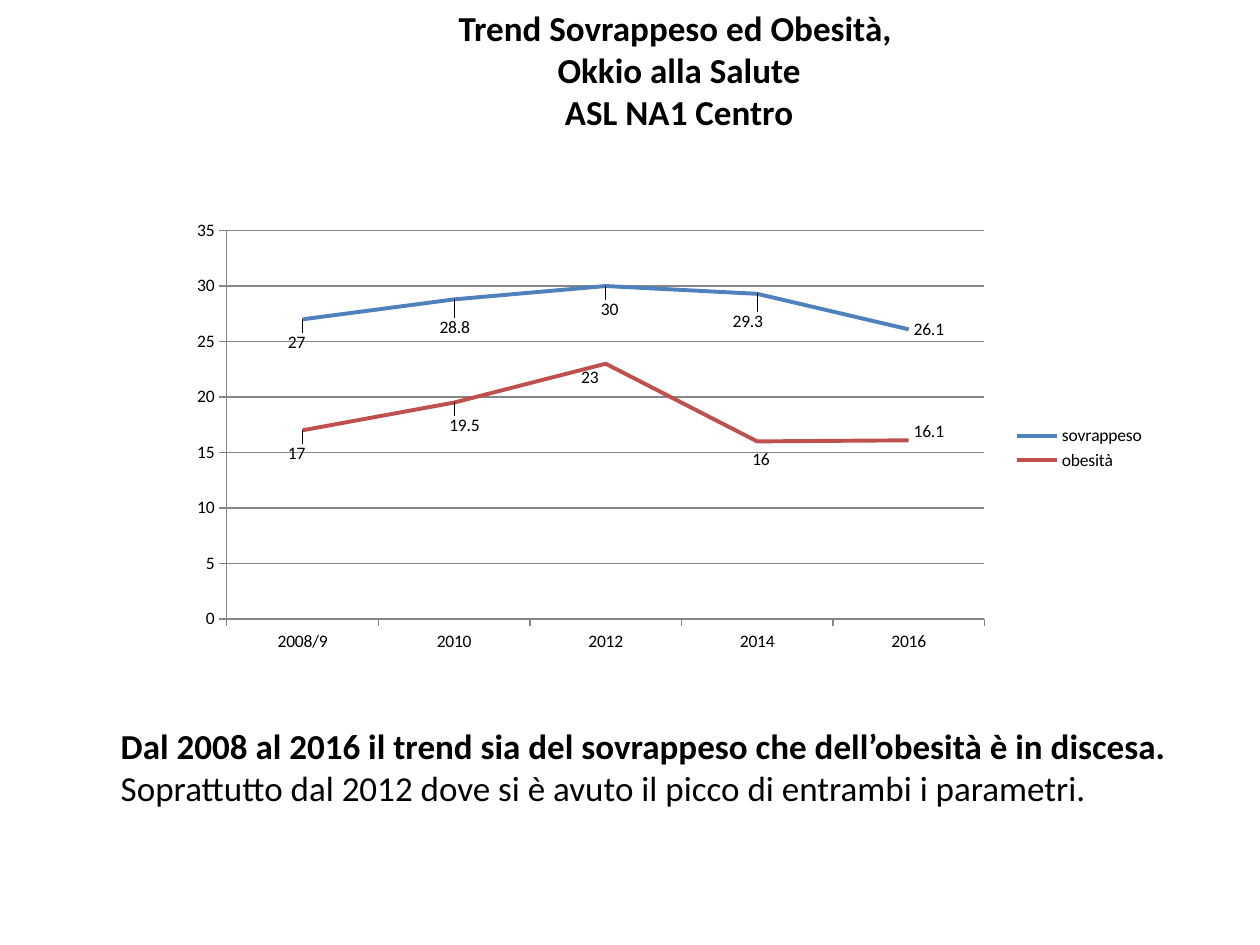
from pptx import Presentation
from pptx.chart.data import CategoryChartData
from pptx.dml.color import RGBColor
from pptx.enum.chart import XL_CHART_TYPE as ChartType, XL_LABEL_POSITION as LabelPos
from pptx.enum.chart import XL_LEGEND_POSITION as LegendPos, XL_TICK_MARK as Tick
from pptx.enum.text import PP_ALIGN as Align
from pptx.oxml import parse_xml
from pptx.util import Inches, Pt

# Content
TITLE = ["Trend Sovrappeso ed Obesità, ", "Okkio alla Salute", "ASL NA1 Centro"]
COMMENT = [
    ("Dal 2008 al 2016 il trend sia del sovrappeso che dell’obesità è in discesa. ", True),
    ("Soprattutto dal 2012 dove si è avuto il picco di entrambi i parametri.", False),
]
YEARS = ["2008/9", "2010", "2012", "2014", "2016"]
# Label shifts are shares of the chart's size, away from the right of each point
SERIES = [
    {"name": "sovrappeso ", "color": "overweight", "values": [27, 28.8, 30, 29.3, 26.1],
     "shifts": [(-0.02, 0.05), (-0.02, 0.06), (-0.01, 0.05), (-0.03, 0.06)]},
    {"name": "obesità", "color": "obesity", "values": [17, 19.5, 23, 16, 16.1],
     "shifts": [(-0.02, 0.05), (-0.01, 0.05), (-0.03, 0.03), (-0.01, 0.04), (0, -0.02)]},
]
COLORS = {"text": "000000", "overweight": "4F81BD", "obesity": "C0504D", "grid": "868686"}
FONT = "Calibri"

# Places in inches: left, top, width, height
TITLE_AREA = (2.15, 0, 6.48, 1.11)
CHART_AREA = (1.41, 1.72, 7.81, 3.67)
COMMENT_AREA = (0.86, 5.7, 8.91, 0.77)
PLOT_SHARES = {"x": 0.05, "y": 0.03, "w": 0.77, "h": 0.84}
CHART_NS = 'xmlns:c="http://schemas.openxmlformats.org/drawingml/2006/chart"'


def color(name):
    return RGBColor.from_string(COLORS[name])


def place(area):
    return [Inches(length) for length in area]


def style(font, size, bold=None):
    font.name, font.size, font.bold = FONT, Pt(size), bold
    font.color.rgb = color("text")


def add_text(page, area):
    frame = page.shapes.add_textbox(*place(area)).text_frame
    frame.word_wrap = True
    return frame


def style_line(line, name, width):
    line.color.rgb = color(name)
    line.width = Pt(width)


def add_labels(series, shifts):
    labels = series.data_labels
    labels.show_value = True
    labels.position = LabelPos.RIGHT
    style(labels.font, 10)
    for index, (x, y) in enumerate(shifts):
        labels._element.insert(index, parse_xml(
            f'<c:dLbl {CHART_NS}><c:idx val="{index}"/>'
            f'<c:layout><c:manualLayout><c:x val="{x}"/><c:y val="{y}"/></c:manualLayout></c:layout>'
            '<c:dLblPos val="r"/><c:showLegendKey val="0"/><c:showVal val="1"/>'
            '<c:showCatName val="0"/><c:showSerName val="0"/><c:showPercent val="0"/>'
            '<c:showBubbleSize val="0"/></c:dLbl>'))


def set_plot_area(chart):
    area = chart._chartSpace.chart.plotArea
    for layout in area.findall("{*}layout"):
        area.remove(layout)
    shares = "".join(f'<c:{key} val="{share}"/>' for key, share in PLOT_SHARES.items())
    area.insert(0, parse_xml(
        f'<c:layout {CHART_NS}><c:manualLayout><c:layoutTarget val="inner"/>'
        f'<c:xMode val="edge"/><c:yMode val="edge"/>{shares}</c:manualLayout></c:layout>'))


def add_trend_chart(page):
    data = CategoryChartData()
    data.categories = YEARS
    for entry in SERIES:
        data.add_series(entry["name"], entry["values"])
    chart = page.shapes.add_chart(ChartType.LINE, *place(CHART_AREA), data).chart
    style(chart.font, 10)
    chart.has_title = False
    chart.has_legend = True
    chart.legend.position = LegendPos.RIGHT
    chart.legend.include_in_layout = False
    chart.plots[0].vary_by_categories = False

    # Axes and gridlines
    for axis in (chart.category_axis, chart.value_axis):
        axis.major_tick_mark = Tick.OUTSIDE
        axis.minor_tick_mark = Tick.NONE
        style_line(axis.format.line, "grid", 0.75)
    values = chart.value_axis
    values.minimum_scale, values.maximum_scale, values.major_unit = 0, 35, 5
    values.has_major_gridlines = True
    style_line(values.major_gridlines.format.line, "grid", 0.75)

    # Lines with their labels
    for series, entry in zip(chart.plots[0].series, SERIES):
        series.smooth = False
        style_line(series.format.line, entry["color"], 2.25)
        add_labels(series, entry["shifts"])
    set_plot_area(chart)


def main():
    deck = Presentation()
    deck.slide_width, deck.slide_height = Inches(10), Inches(7.5)
    page = deck.slides.add_slide(deck.slide_layouts[6])
    add_trend_chart(page)

    # Title
    frame = add_text(page, TITLE_AREA)
    for index, line in enumerate(TITLE):
        para = frame.add_paragraph() if index else frame.paragraphs[0]
        para.text, para.alignment = line, Align.CENTER
        style(para.font, 20, True)

    # Comment below the chart
    para = add_text(page, COMMENT_AREA).paragraphs[0]
    for words, bold in COMMENT:
        span = para.add_run()
        span.text = words
        style(span.font, 20, bold)

    deck.save("out.pptx")


if __name__ == "__main__":
    main()
